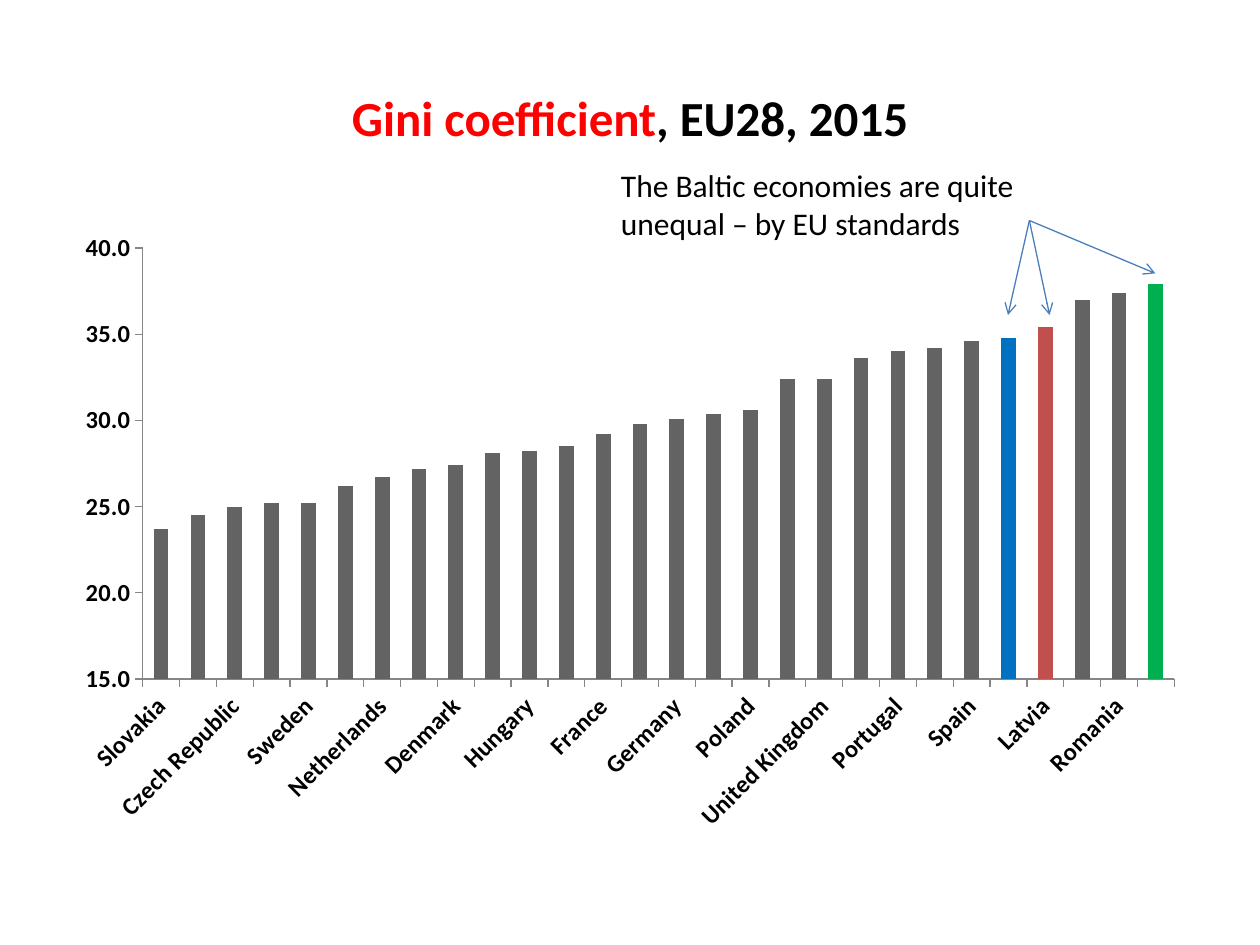
from lxml import etree
from pptx import Presentation, util as u
from pptx.chart.data import CategoryChartData
from pptx.dml.color import RGBColor
from pptx.enum import chart as ch, shapes, text
from pptx.oxml.ns import qn

GINI = {
    "Slovakia": 23.7, "Slovenia": 24.5, "Czech Republic": 25, "Finland": 25.2,
    "Sweden": 25.2, "Belgium": 26.2, "Netherlands": 26.7, "Austria": 27.2,
    "Denmark": 27.4, "Malta": 28.1, "Hungary": 28.2, "Luxembourg": 28.5,
    "France": 29.2, "Ireland": 29.8, "Germany": 30.1, "Croatia": 30.4,
    "Poland": 30.6, "Italy": 32.4, "United Kingdom": 32.4, "Cyprus": 33.6,
    "Portugal": 34, "Greece": 34.2, "Spain": 34.6, "Estonia": 34.8,
    "Latvia": 35.4, "Bulgaria": 37, "Romania": 37.4, "Lithuania": 37.9,
}
BALTIC_COLOURS = {"Estonia": "0070C0", "Latvia": "C0504D", "Lithuania": "00B050"}
ARROW_START = (8.17, 1.75)
ARROW_TIPS = [(9.17, 2.17), (8.33, 2.5), (8, 2.5)]


def paint(colour_format, colour):
    colour_format.rgb = RGBColor.from_string(colour)


class GiniSlide:
    """Holds the slide and its style, with one method per kind of element."""

    font = "Calibri"
    ink, bar, axis, arrow_line = "000000", "636363", "868686", "4B7EBC"

    def __init__(self, presentation):
        self.slide = presentation.slides.add_slide(presentation.slide_layouts[6])

    def style(self, font, size, bold=False):
        font.name, font.size, font.bold = self.font, u.Pt(size), bold
        paint(font.color, self.ink)

    def text(self, box, runs, size, bold=False, anchor=text.MSO_ANCHOR.TOP,
             align=text.PP_ALIGN.LEFT):
        frame = self.slide.shapes.add_textbox(*map(u.Inches, box)).text_frame
        frame.word_wrap = True
        frame.vertical_anchor = anchor
        paragraph = frame.paragraphs[0]
        paragraph.alignment = align
        self.style(paragraph.font, size, bold)
        for wording, colour in runs:
            run = paragraph.add_run()
            run.text = wording
            paint(run.font.color, colour)

    def chart(self, box, values, highlights):
        data = CategoryChartData(number_format="0.0")
        data.categories = list(values)
        data.add_series("Series 1", list(values.values()))
        chart = self.slide.shapes.add_chart(
            ch.XL_CHART_TYPE.COLUMN_CLUSTERED, *map(u.Inches, box), data).chart
        chart.has_legend = chart.has_title = False
        self.style(chart.font, 10)
        for axis in (chart.category_axis, chart.value_axis):
            axis.has_major_gridlines = False
            axis.major_tick_mark = ch.XL_TICK_MARK.OUTSIDE
            axis.minor_tick_mark = ch.XL_TICK_MARK.NONE
            axis.format.line.width = u.Pt(0.75)
            paint(axis.format.line.color, self.axis)
            self.style(axis.tick_labels.font, 14, True)
        slant = chart.category_axis._element.find(qn("c:txPr")).find(qn("a:bodyPr"))
        slant.set("rot", "-2700000")
        scale = chart.value_axis
        scale.minimum_scale, scale.maximum_scale, scale.major_unit = 15, 40, 5
        scale.tick_labels.number_format = "#,##0.0"
        scale.tick_labels.number_format_is_linked = False
        plot = chart.plots[0]
        plot.gap_width = 150
        plot.vary_by_categories = False
        gini = plot.series[0]
        gini.invert_if_negative = False
        self.fill(gini, self.bar)
        countries = list(values)
        for country, colour in highlights.items():
            self.fill(gini.points[countries.index(country)], colour)

    def fill(self, bars, colour):
        bars.format.fill.solid()
        paint(bars.format.fill.fore_color, colour)

    def arrow(self, start, tip):
        arrow = self.slide.shapes.add_connector(
            shapes.MSO_CONNECTOR.STRAIGHT, *map(u.Inches, start + tip))
        arrow.line.width = u.Pt(0.75)
        paint(arrow.line.color, self.arrow_line)
        properties = arrow._element.spPr
        etree.SubElement(properties.find(qn("a:ln")), qn("a:tailEnd"), type="arrow")
        etree.SubElement(properties, qn("a:effectLst"))


def main():
    presentation = Presentation()
    presentation.slide_width, presentation.slide_height = u.Inches(10), u.Inches(7.5)
    page = GiniSlide(presentation)
    page.text((0.5, 0.3, 9, 1.25),
              [("Gini coefficient", "FF0000"), (", EU28, 2015", page.ink)],
              28, True, text.MSO_ANCHOR.MIDDLE, text.PP_ALIGN.CENTER)
    page.chart((0.5, 1.75, 9, 4.95), GINI, BALTIC_COLOURS)
    for tip in ARROW_TIPS:
        page.arrow(ARROW_START, tip)
    page.text((4.83, 1.27, 3.67, 0.71),
              [("The Baltic economies are quite unequal – by EU standards", page.ink)], 18)
    presentation.save("out.pptx")


if __name__ == "__main__":
    main()
